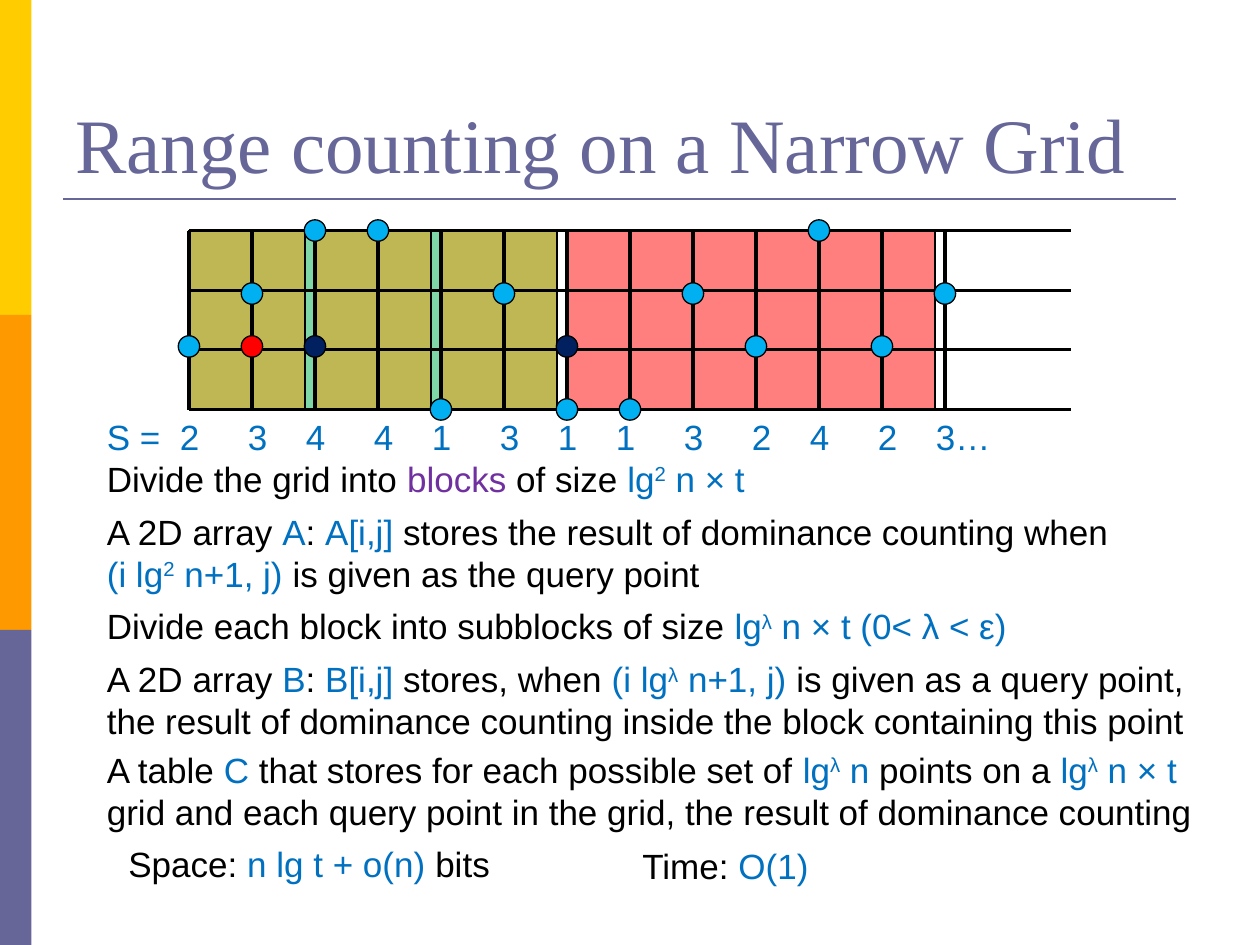
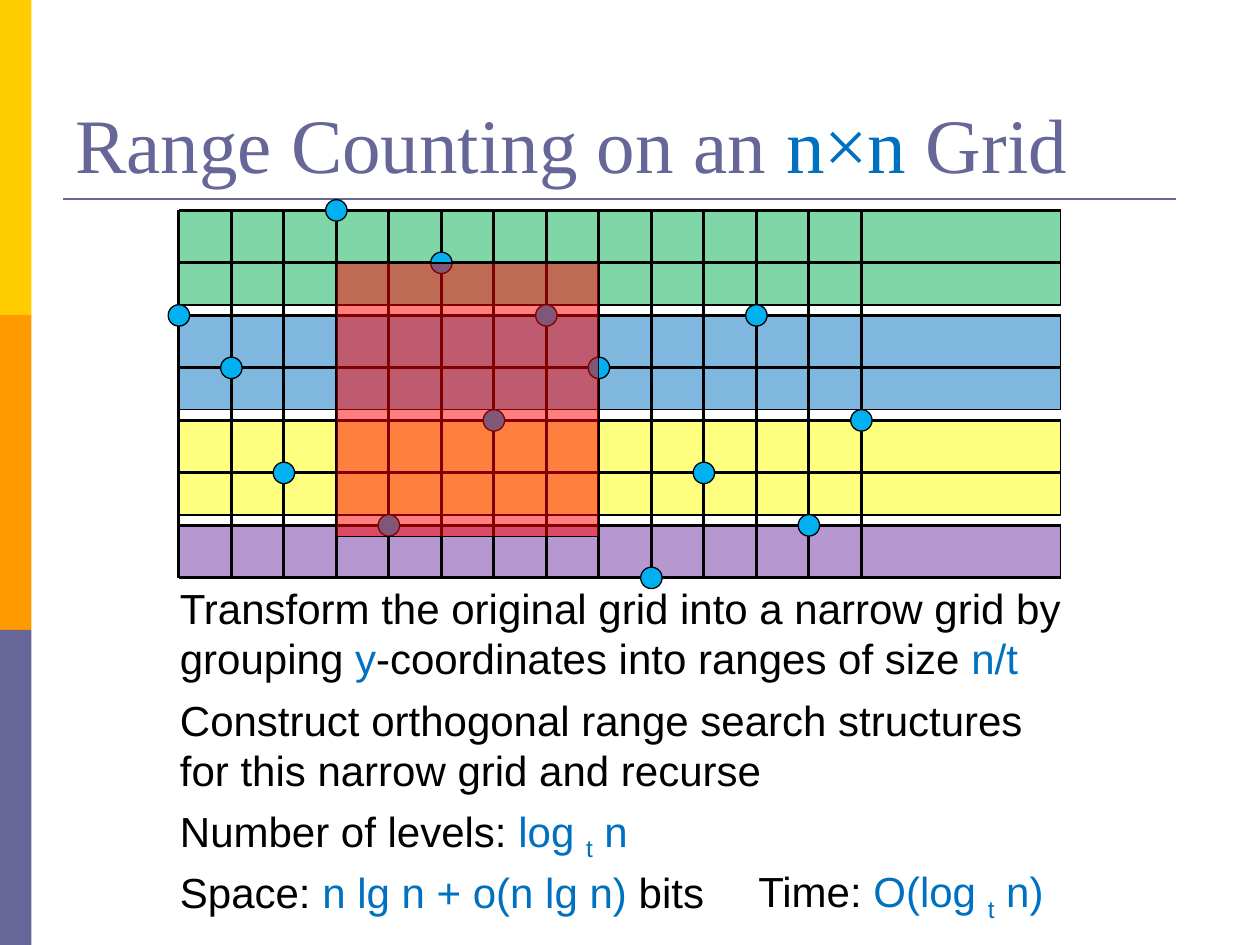
from itertools import accumulate

from lxml import etree
from pptx import Presentation
from pptx.dml.color import RGBColor
from pptx.enum.shapes import MSO_CONNECTOR as CONN, MSO_SHAPE as SHAPE
from pptx.enum.text import MSO_ANCHOR as ANCHOR
from pptx.oxml.ns import qn
from pptx.util import Inches, Pt

COLORS = {
    "ink": "000000", "slate": "666699", "gold": "FFCC00", "orange": "FF9900",
    "blue": "0070C0", "sky": "00B0F0", "navy": "002060", "red": "FF0000",
    "green": "00B050", "yellow": "FFFF00", "purple": "7030A0",
}
TITLE_FONT, BODY_FONT = "Times New Roman", "Arial"
DOT = 0.17
CELL = 5 / 12


def rgb(name):
    return RGBColor.from_string(COLORS[name])


def add_filled(s, kind, box, color, alpha=None, outline=True):
    sp = s.shapes.add_shape(kind, *map(Inches, box))
    sp.shadow.inherit = False
    sp.fill.solid()
    sp.fill.fore_color.rgb = rgb(color)
    if alpha:
        clr = sp.fill._xPr.find(qn("a:solidFill"))[0]
        etree.SubElement(clr, qn("a:alpha")).set("val", str(alpha * 1000))
    if outline:
        sp.line.color.rgb = rgb("ink")
        sp.line.width = Pt(0.75)
    else:
        sp.line.fill.background()
    return sp


def add_band(s, box, color):
    return add_filled(s, SHAPE.RECTANGLE, box, color, alpha=50)


def add_dot(s, x, y, color="sky"):
    return add_filled(s, SHAPE.OVAL, (x - DOT / 2, y - DOT / 2, DOT, DOT), color)


def add_line(s, x1, y1, x2, y2, color="ink", width=1.75):
    c = s.shapes.add_connector(CONN.STRAIGHT, *map(Inches, (x1, y1, x2, y2)))
    c.line.color.rgb = rgb(color)
    c.line.width = Pt(width)
    etree.SubElement(c._element.spPr, qn("a:effectLst"))


def add_text(s, box, runs, size, font=BODY_FONT, color="ink", anchor=ANCHOR.TOP):
    tf = s.shapes.add_textbox(*map(Inches, box)).text_frame
    tf.word_wrap = True
    tf.vertical_anchor = anchor
    p = tf.paragraphs[0]
    for run in runs:
        text, tint, base = (*run, 0)[:3] if isinstance(run, tuple) else (run, color, 0)
        r = p.add_run()
        r.text = text
        r.font.size = Pt(size)
        r.font.name = font
        r.font.color.rgb = rgb(tint)
        if base:
            r._r.get_or_add_rPr().set("baseline", str(base * 1000))
    return p


def add_tab_stops(p, stops):
    tabs = etree.SubElement(p._p.get_or_add_pPr(), qn("a:tabLst"))
    for stop in stops:
        etree.SubElement(tabs, qn("a:tab"), pos=str(Inches(stop)), algn="l")


def add_frame(prs, title):
    s = prs.slides.add_slide(prs.slide_layouts[6])
    for i, color in enumerate(("gold", "orange", "slate")):
        add_filled(s, SHAPE.RECTANGLE, (0, 2.5 * i, 0.25, 2.5), color, outline=False)
    add_line(s, 0.5, 1.58, 9.33, 1.58, "slate", 1.5)
    add_text(s, (0.5, 0.3, 9, 1.25), title, 44, TITLE_FONT, "slate", ANCHOR.BOTTOM)
    return s


def add_grid(s, box, rows, cols, col_step):
    left, top, width, height = box
    for i in range(rows):
        y = top + height * i / (rows - 1)
        add_line(s, left, y, left + width, y)
    for i in range(cols):
        x = left + col_step * i
        add_line(s, x, top, x, top + height)


def add_narrow_grid(s, box, sequence):
    left, top, width, height = box
    step = 0.5
    level_y = {4: top, 3: top + 0.5, 2: top + 0.92, 1: top + height}
    add_band(s, (left, top, 2.92, height), "green")
    for i in (2, 1, 0):
        add_band(s, (left + i, top, 0.92, height), "orange")
    add_band(s, (left + 3, top, 2.92, height), "red")
    add_grid(s, box, 4, len(sequence), step)
    for i, level in enumerate(sequence):
        add_dot(s, left + step * i, level_y[level])
    for col, color in ((1, "red"), (2, "navy"), (6, "navy")):
        add_dot(s, left + step * col, level_y[2], color)


def add_sequence(s, box, sequence):
    labels = [f"{n}" for n in sequence]
    p = add_text(s, box, [("S =\t" + "\t".join(labels) + "…", "blue")], 20)
    wide, tight = 0.54, 0.46
    gaps = [wide, tight] * 3 + [tight, wide] + [wide, tight] * 2
    add_tab_stops(p, accumulate(gaps, initial=0.58))


def add_square_grid(s, box, point_rows):
    left, top, width, height = box
    for i, color in enumerate(("green", "blue", "yellow", "purple")):
        band_height = CELL if color == "purple" else 0.75
        add_band(s, (left, top + 2 * CELL * i, width, band_height), color)
    add_grid(s, box, 8, len(point_rows), CELL)
    for col, row in enumerate(point_rows):
        add_dot(s, left + CELL * col, top + CELL * row)
    add_band(s, (left + 3 * CELL, top + CELL, 5 * CELL, 2.17), "red")


def build_narrow_slide(prs):
    s = add_frame(prs, ["Range counting on a Narrow Grid"])
    sequence = (2, 3, 4, 4, 1, 3, 1, 1, 3, 2, 4, 2, 3)
    add_narrow_grid(s, (1.5, 1.83, 7, 1.42), sequence)
    add_sequence(s, (0.75, 3.25, 7.33, 0.44), sequence)
    lg, lam = ("lg", "blue"), ("λ", "blue", 30)
    squared = ("2", "blue", 30)
    notes = (
        ((0.75, 3.58, 7.33, 0.44),
         ["Divide the grid into ", ("blocks", "purple"), " of size ",
          lg, squared, (" n × t", "blue")]),
        ((0.75, 4, 8.17, 0.77),
         ["A 2D array ", ("A", "blue"), ": ", ("A[i,j]", "blue"),
          " stores the result of dominance counting when ",
          ("(i lg", "blue"), squared, (" n+1, j) ", "blue"),
          "is given as the query point"]),
        ((0.75, 4.75, 9, 0.44),
         ["Divide each block into subblocks of size ",
          lg, lam, (" n × t (0< λ < ε)", "blue")]),
        ((0.75, 5.17, 8.83, 0.77),
         ["A 2D array ", ("B", "blue"), ": ", ("B[i,j]", "blue"), " stores, when ",
          ("(i lg", "blue"), lam, (" n+1, j) ", "blue"),
          "is given as a query point, the result of dominance counting "
          "inside the block containing this point"]),
        ((0.75, 5.89, 8.83, 0.77),
         ["A table ", ("C ", "blue"), "that stores for each possible set of ",
          lg, lam, (" n ", "blue"), "points on a ", lg, lam, (" n × t ", "blue"),
          "grid and each query point in the grid, "
          "the result of dominance counting"]),
        ((0.92, 6.64, 3.5, 0.44),
         ["Space: ", ("n lg t + o(n)", "blue"), " bits"]),
        ((5, 6.65, 3.5, 0.44), ["Time: ", ("O(1)", "blue")]),
    )
    for box, runs in notes:
        add_text(s, box, runs, 20)


def build_square_slide(prs):
    s = add_frame(prs, ["Range Counting on an ", ("n×n ", "blue"), "Grid"])
    point_rows = (2, 3, 5, 0, 6, 1, 4, 2, 3, 7, 5, 2, 6, 4)
    add_square_grid(s, (1.42, 1.67, 7, 7 * CELL), point_rows)
    sub_t = ("t", "blue", -25)
    notes = (
        ((1.33, 4.57, 7.33, 0.91),
         ["Transform the original grid into a narrow grid by grouping ",
          ("y", "blue"), "-coordinates into ranges of size ", ("n/t", "blue")]),
        ((1.33, 5.46, 7.33, 0.91),
         ["Construct orthogonal range search structures "
          "for this narrow grid and recurse"]),
        ((1.33, 6.34, 7.33, 0.5),
         ["Number of levels: ", ("log ", "blue"), sub_t, (" n", "blue")]),
        ((1.33, 6.83, 4.5, 0.5),
         ["Space: ", ("n lg n + o(n lg n) ", "blue"), "bits"]),
        ((5.92, 6.82, 3.25, 0.5),
         ["Time: ", ("O(log ", "blue"), sub_t, (" n)", "blue")]),
    )
    for box, runs in notes:
        add_text(s, box, runs, 24)


def main():
    prs = Presentation()
    prs.slide_width, prs.slide_height = Inches(10), Inches(7.5)
    build_narrow_slide(prs)
    build_square_slide(prs)
    prs.save("out.pptx")


if __name__ == "__main__":
    main()
